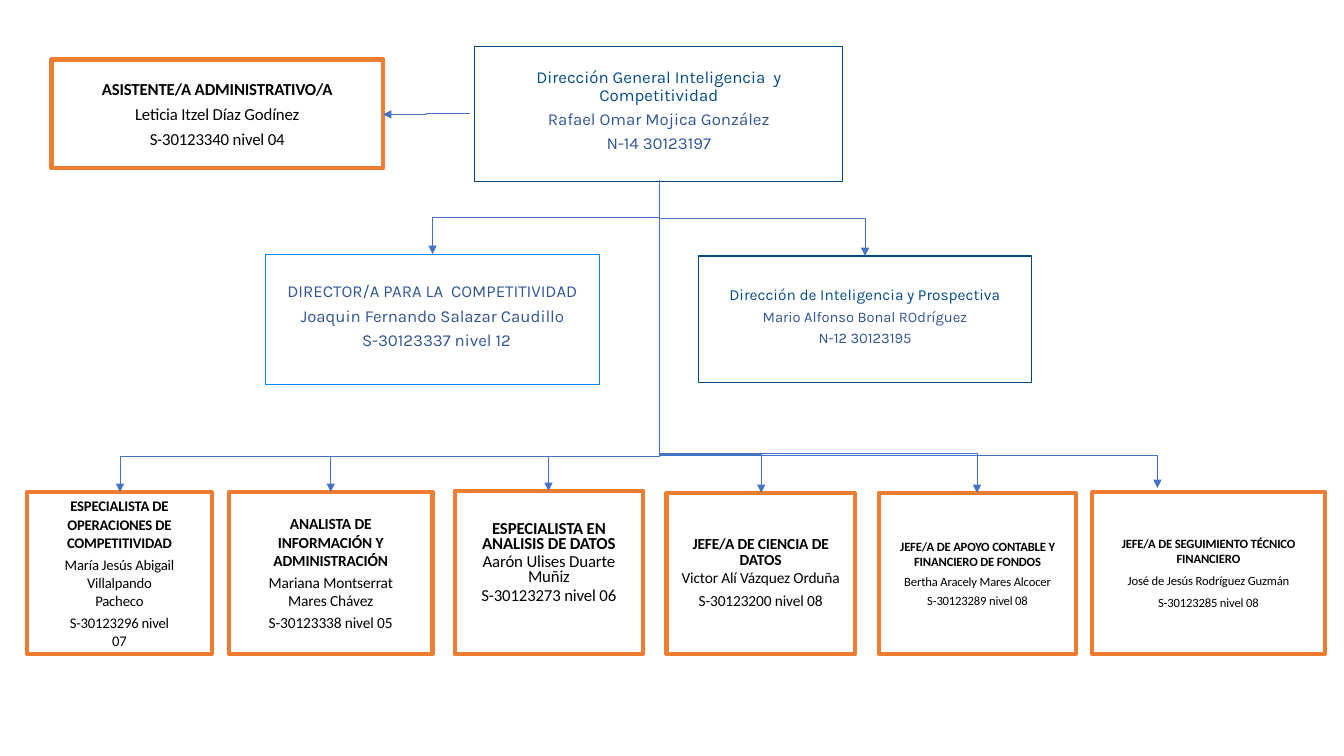
from lxml import etree
from pptx import Presentation
from pptx.dml.color import RGBColor
from pptx.enum.shapes import MSO_CONNECTOR as LINK, MSO_SHAPE as SHAPE
from pptx.enum.text import MSO_ANCHOR as ANCHOR, PP_ALIGN as ALIGN
from pptx.oxml.ns import qn
from pptx.util import Inches, Pt

NAVY = RGBColor(0x00, 0x4A, 0x86)
DEEP = RGBColor(0x03, 0x4C, 0x88)
INDIGO = RGBColor(0x2F, 0x55, 0x97)
SKY = RGBColor(0x00, 0x89, 0xFA)
ORANGE = RGBColor(0xED, 0x7D, 0x31)
LINK_BLUE = RGBColor(0x44, 0x72, 0xC4)
BLACK = RGBColor(0, 0, 0)
WHITE = RGBColor(0xFF, 0xFF, 0xFF)

# The grid has ten columns and ten rows to the inch
CELL = Inches(0.1)

# Paragraph rules: attributes, plus the side margin in cells
AIRY = ({"line_spacing": 0.9, "space_after": Pt(4.2)}, 0)
SHIFTED = (AIRY[0], 0.8)
ROLE = ({"line_spacing": Pt(13), "space_before": Pt(2.6)}, 2.6)
TIGHT = ({"line_spacing": Pt(10.8), "space_before": Pt(2.3)}, 0.1)
LOOSE = ({"line_spacing": Pt(15), "space_before": Pt(0.8)}, 0.8)
PLAIN = ({"space_before": Pt(3)}, 0)
HEAD = ({"space_before": Pt(4)}, 0)
WIDE = ({"line_spacing": 1.25}, 3)

prs = Presentation()
prs.slide_width, prs.slide_height = Inches(13.33), Inches(7.5)
slide = prs.slides.add_slide(prs.slide_layouts[6])


def add_post(left, top, width, height, border, lines, spare_bottom=0):
    """Box of one post; lines hold (text, size, colour, paragraph rule)."""
    is_staff = border == ORANGE
    box = slide.shapes.add_shape(
        SHAPE.RECTANGLE, *(round(n * CELL) for n in (left, top, width, height)))
    box.shadow.inherit = False
    box.line.color.rgb = border
    box.line.width = Pt(3 if is_staff else 0.75)
    if is_staff:
        box.fill.background()
        insets = (1, 0.5, 1, 0.5 + spare_bottom)
    else:
        box.fill.solid()
        box.fill.fore_color.rgb = WHITE
        insets = (0.1, 0.1, 0.1, 0.6)
    frame = box.text_frame
    frame.word_wrap = True
    frame.vertical_anchor = ANCHOR.MIDDLE
    for side, inset in zip(("left", "top", "right", "bottom"), insets):
        setattr(frame, f"margin_{side}", round(inset * CELL))
    for i, (text, size, colour, (rule, margin)) in enumerate(lines):
        para = frame.add_paragraph() if i else frame.paragraphs[0]
        para.alignment = ALIGN.CENTER
        for key, value in rule.items():
            setattr(para, key, value)
        props = para._p.get_or_add_pPr()
        props.set("marL", str(round(margin * CELL)))
        if is_staff:
            props.set("marR", str(round(margin * CELL)))
        run = para.add_run()
        run.text = text
        font = {"name": "Calibri" if is_staff else "Karla",
                "size": Pt(size), "bold": is_staff and i == 0}
        for key, value in font.items():
            setattr(run.font, key, value)
        run.font.color.rgb = colour
        if is_staff:
            run._r.get_or_add_rPr().set("spc", "-10")


def add_link(begin_x, begin_y, end_x, end_y, turn=0, bend=0.5):
    """Elbow arrow, turned by degrees, bending at a share of its run."""
    link = slide.shapes.add_connector(
        LINK.ELBOW, *(round(n * CELL) for n in (begin_x, begin_y, end_x, end_y)))
    link.line.color.rgb = LINK_BLUE
    link.line.width = Pt(0.5)
    props = link._element.spPr
    props.find(qn("a:xfrm")).set("rot", str(turn * 60000))
    guides = props.find(qn("a:prstGeom")).find(qn("a:avLst"))
    etree.SubElement(guides, qn("a:gd"), name="adj1", fmla=f"val {round(bend * 100000)}")
    etree.SubElement(props.find(qn("a:ln")), qn("a:tailEnd"), type="triangle")
    etree.SubElement(props, qn("a:effectLst"))


# Directorate and its assistant
add_post(47.1, 4.6, 36.5, 13.4, NAVY, [
    ("Dirección General Inteligencia  y Competitividad", 12, DEEP, AIRY),
    ("Rafael Omar Mojica González", 12, INDIGO, AIRY),
    ("N-14 30123197", 12, INDIGO, AIRY)])
add_post(26.3, 25.2, 33.2, 12.9, SKY, [
    ("DIRECTOR/A PARA LA  COMPETITIVIDAD", 12, INDIGO, AIRY),
    ("Joaquin Fernando Salazar Caudillo", 12, INDIGO, AIRY),
    ("S-30123337 nivel 12", 12, INDIGO, SHIFTED)])
add_post(69.3, 25.4, 33, 12.6, NAVY, [
    ("Dirección de Inteligencia y Prospectiva", 11, DEEP, AIRY),
    ("Mario Alfonso Bonal ROdríguez", 10.5, INDIGO, AIRY),
    ("N-12 30123195", 10.5, INDIGO, AIRY)])
add_post(5.1, 5.9, 32.9, 10.8, ORANGE, [
    ("ASISTENTE/A ADMINISTRATIVO/A", 12, BLACK, HEAD),
    ("Leticia Itzel Díaz Godínez", 12, BLACK, WIDE),
    ("S-30123340 nivel 04", 12, BLACK, WIDE)])

# Staff row: left, top, width, text size, spare bottom, rules, texts
STAFF_BOTTOM = 64.9
staff = [
    (2.7, 48.8, 18.3, 10.5, 0, (ROLE, ROLE, ROLE),
     ("ESPECIALISTA DE OPERACIONES DE COMPETITIVIDAD",
      "María Jesús Abigail Villalpando Pacheco", "S-30123296 nivel 07")),
    (22.7, 48.8, 20.2, 11, 0, (ROLE, ROLE, ROLE),
     ("ANALISTA DE INFORMACIÓN Y ADMINISTRACIÓN",
      "Mariana Montserrat Mares Chávez", "S-30123338 nivel 05")),
    (45.1, 48.7, 18.7, 12, 1.8, (TIGHT, TIGHT, TIGHT),
     ("ESPECIALISTA EN ANALISIS DE DATOS",
      "Aarón Ulises Duarte Muñiz", "S-30123273 nivel 06")),
    (66.1, 48.9, 18.7, 11, 0, (TIGHT, TIGHT, PLAIN),
     ("JEFE/A DE CIENCIA DE DATOS",
      "Victor Alí Vázquez Orduña", "S-30123200 nivel 08")),
    (87.2, 48.9, 19.5, 9, 0, (TIGHT, PLAIN, PLAIN),
     ("JEFE/A DE APOYO CONTABLE Y FINANCIERO DE FONDOS",
      "Bertha Aracely Mares Alcocer", "S-30123289 nivel 08")),
    (108.3, 48.8, 23.1, 9, 0, (TIGHT, LOOSE, LOOSE),
     ("JEFE/A DE SEGUIMIENTO TÉCNICO FINANCIERO",
      "José de Jesús Rodríguez Guzmán", "S-30123285 nivel 08")),
]
for left, top, width, size, spare, rules, texts in staff:
    add_post(left, top, width, STAFF_BOTTOM - top, ORANGE,
             [(text, size, BLACK, rule) for text, rule in zip(texts, rules)], spare)

# Arrow to the assistant
add_link(46.6, 11.25, 38, 11.35)

# Arrows down from the directorate: end column, end row, row of the bend
TRUNK_X, TRUNK_Y = 65.4, 17.9
branches = [(42.9, 25.2, 21.6), (85.8, 25.4, 21.7),
            (11.9, 48.8, 45.3), (32.8, 48.8, 45.3), (54.4, 48.7, 45.3),
            (75.5, 48.9, 45.1), (96.9, 48.9, 45), (114.8, 48.4, 45.2)]
for end_x, end_y, bend_y in branches:
    # The elbow is laid flat around its centre, then turned upright
    drop, reach = end_y - TRUNK_Y, abs(end_x - TRUNK_X)
    centre_x, centre_y = (TRUNK_X + end_x) / 2, (TRUNK_Y + end_y) / 2
    to_right = end_x > TRUNK_X
    half = drop / 2 if to_right else -drop / 2
    add_link(centre_x + half, centre_y - reach / 2, centre_x - half, centre_y + reach / 2,
             270 if to_right else 90, (bend_y - TRUNK_Y) / drop)

prs.save("out.pptx")
